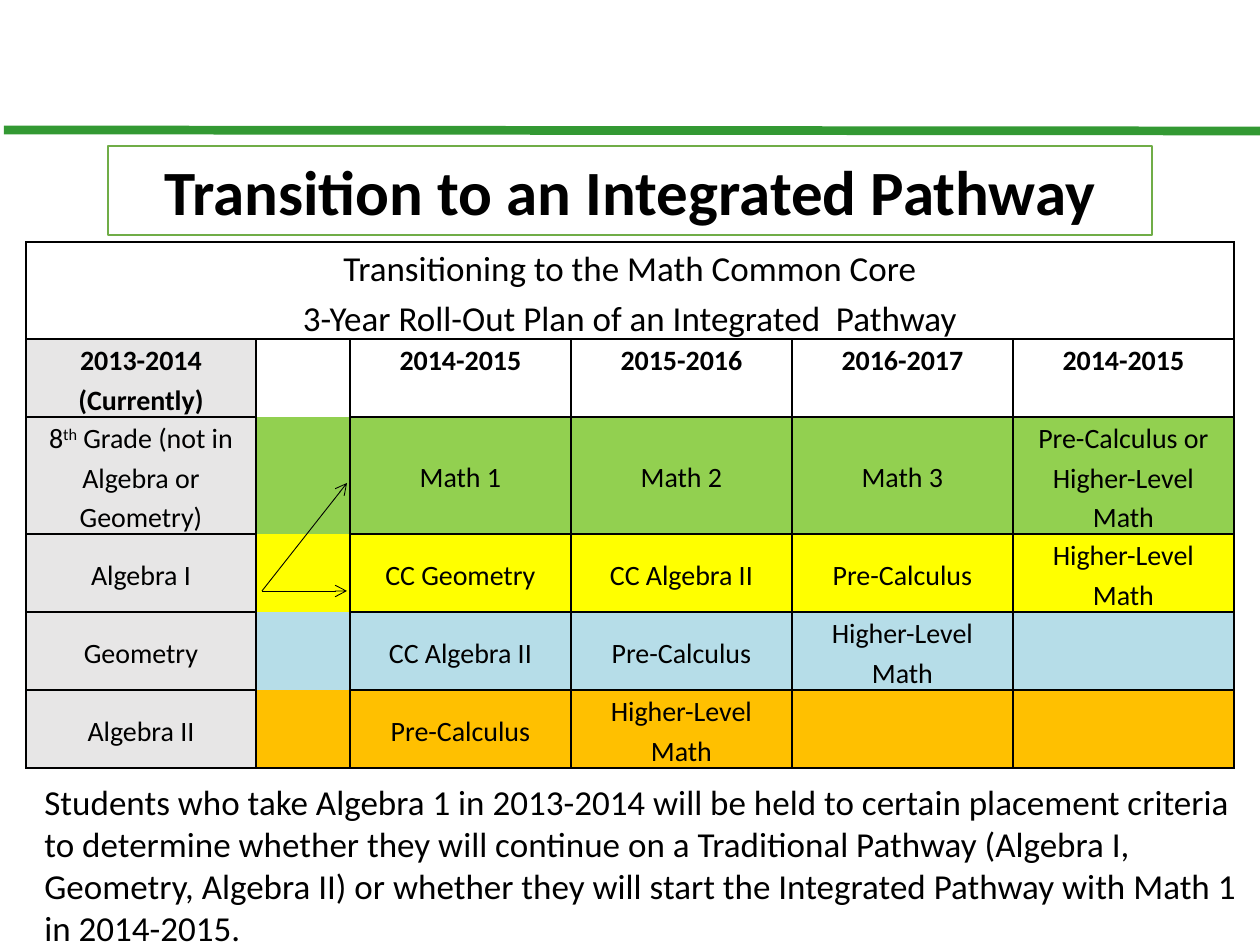
from dataclasses import dataclass

from lxml.etree import SubElement
from pptx import Presentation
from pptx.dml.color import RGBColor
from pptx.enum.shapes import MSO_CONNECTOR, MSO_SHAPE
from pptx.enum.text import MSO_ANCHOR, MSO_AUTO_SIZE, PP_ALIGN
from pptx.oxml.ns import qn
from pptx.util import Emu, Pt

EMU_PER_PX = 914400 / 126


def px(length):
    return Emu(round(length * EMU_PER_PX))


@dataclass(frozen=True)
class Theme:
    font: str = "Calibri"
    ink: str = "000000"
    paper: str = "FFFFFF"
    rule: str = "339933"
    frame: str = "70AD47"
    current: str = "E7E6E6"
    paths: tuple = ("92D050", "FFFF00", "B6DDE8", "FFC000")
    title_size: int = 36
    body_size: int = 20
    cell_size: int = 16


class PageBuilder:
    def __init__(self, page, theme):
        self.page = page
        self.theme = theme

    def style(self, para, size, bold=False, align=PP_ALIGN.LEFT):
        para.alignment = align
        font = para.font
        font.name, font.size, font.bold = self.theme.font, Pt(size), bold
        font.color.rgb = RGBColor.from_string(self.theme.ink)

    def line(self, start, end, color, width, arrow=False):
        line = self.page.shapes.add_connector(
            MSO_CONNECTOR.STRAIGHT, *map(px, start + end))
        line.line.color.rgb = RGBColor.from_string(color)
        line.line.width = Pt(width)
        if arrow:
            SubElement(line.line._get_or_add_ln(), qn("a:tailEnd"), type="arrow")
        SubElement(line._element.spPr, qn("a:effectLst"))

    def title(self, text, *bounds):
        box = self.page.shapes.add_shape(MSO_SHAPE.RECTANGLE, *map(px, bounds))
        box.shadow.inherit = False
        box.fill.solid()
        box.fill.fore_color.rgb = RGBColor.from_string(self.theme.paper)
        box.line.color.rgb = RGBColor.from_string(self.theme.frame)
        box.line.width = Pt(1)
        self.fill_box(box, text, self.theme.title_size, True, PP_ALIGN.CENTER)

    def note(self, text, *bounds):
        box = self.page.shapes.add_textbox(*map(px, bounds))
        self.fill_box(box, text, self.theme.body_size)

    def fill_box(self, box, text, *style):
        frame = box.text_frame
        frame.word_wrap = True
        frame.auto_size = MSO_AUTO_SIZE.SHAPE_TO_FIT_TEXT
        frame.text = text
        self.style(frame.paragraphs[0], *style)

    def table(self, left, top, columns, rows):
        table = self.page.shapes.add_table(
            len(rows), len(columns), px(left), px(top),
            px(sum(columns)), px(sum(rows))).table
        table.first_row = table.horz_banding = False
        for column, width in zip(table.columns, columns):
            column.width = px(width)
        for row, height in zip(table.rows, rows):
            row.height = px(height)
        return table

    def cell(self, cell, text, size, fill, borders, bold=False, middle=False):
        """Fill one cell; borders holds left, right, top and bottom widths."""
        cell.margin_left = cell.margin_right = px(9)
        cell.margin_top = cell.margin_bottom = 0
        cell.vertical_anchor = MSO_ANCHOR.MIDDLE if middle else MSO_ANCHOR.TOP
        cell.text = ""
        for index, words in enumerate(text.split("\n")):
            frame = cell.text_frame
            para = frame.add_paragraph() if index else frame.paragraphs[0]
            # Carets enclose superscript text
            for part, piece in enumerate(words.split("^")):
                if piece:
                    span = para.add_run()
                    span.text = piece
                    if part % 2:
                        span._r.get_or_add_rPr().set("baseline", "30000")
            para.line_spacing = 1.15
            self.style(para, size, bold, PP_ALIGN.CENTER)
        properties = cell._tc.get_or_add_tcPr()
        for side, width in zip("LRTB", borders):
            edge = SubElement(properties, qn(f"a:ln{side}"), w=str(Pt(width)))
            if width:
                solid = SubElement(edge, qn("a:solidFill"))
                SubElement(solid, qn("a:srgbClr"), val=self.theme.ink)
            else:
                SubElement(edge, qn("a:noFill"))
        if fill:
            cell.fill.solid()
            cell.fill.fore_color.rgb = RGBColor.from_string(fill)
        else:
            cell.fill.background()


HEADING = ("Transitioning to the Math Common Core\n"
           "3-Year Roll-Out Plan of an Integrated  Pathway")
PLAN = [
    ["2013-2014\n(Currently)", "", "2014-2015", "2015-2016", "2016-2017", "2014-2015"],
    ["8^th^ Grade (not in Algebra or Geometry)", "", "Math 1", "Math 2", "Math 3",
     "Pre-Calculus or Higher-Level Math"],
    ["Algebra I", "", "CC Geometry", "CC Algebra II", "Pre-Calculus",
     "Higher-Level Math"],
    ["Geometry", "", "CC Algebra II", "Pre-Calculus", "Higher-Level Math", ""],
    ["Algebra II", "", "Pre-Calculus", "Higher-Level Math", "", ""],
]
NOTE = ("Students who take Algebra 1 in 2013-2014 will be held to certain placement "
        "criteria to determine whether they will continue on a Traditional Pathway "
        "(Algebra I, Geometry, Algebra II) or whether they will start the Integrated "
        "Pathway with Math 1 in 2014-2015.")
GAP_COLUMN = 1


def cell_borders(row, column):
    """The gap column is open between its rows and has heavier sides."""
    if column == GAP_COLUMN:
        return (1.5, 1.5, 1.5 if row == 0 else 0,
                1.5 if row == len(PLAN) - 1 else 0)
    return (1.5 if column == GAP_COLUMN + 1 else 1,
            1.5 if column == GAP_COLUMN - 1 else 1, 1, 1)


def main():
    theme = Theme()
    deck = Presentation()
    deck.slide_width, deck.slide_height = px(1260), px(945)
    builder = PageBuilder(deck.slides.add_slide(deck.slide_layouts[6]), theme)

    # Header rule and title
    builder.line((4, 130), (1260, 131), theme.rule, 5)
    builder.title("Transition to an Integrated Pathway", 108, 146, 1044, 89)

    # Roll-out plan
    table = builder.table(26, 242, [230, 94] + [221] * 4, [97, 78, 117, 78, 78, 78])
    table.cell(0, 0).merge(table.cell(0, 5))
    for column in range(6):
        builder.cell(table.cell(0, column), "" if column else HEADING,
                     theme.body_size, None, (1, 1, 1, 1))
    fills = (None,) + theme.paths
    for row, (texts, fill) in enumerate(zip(PLAN, fills)):
        for column, text in enumerate(texts):
            builder.cell(table.cell(row + 1, column), text, theme.cell_size,
                         fill if column else theme.current,
                         cell_borders(row, column), bold=row == 0, middle=row > 0)

    # Two ways on from Algebra I
    for end in ((347, 483), (347, 591)):
        builder.line((262, 591), end, theme.ink, 0.5, arrow=True)

    # Placement note
    builder.note(NOTE, 32, 774, 1228, 183)
    deck.save("out.pptx")


if __name__ == "__main__":
    main()
